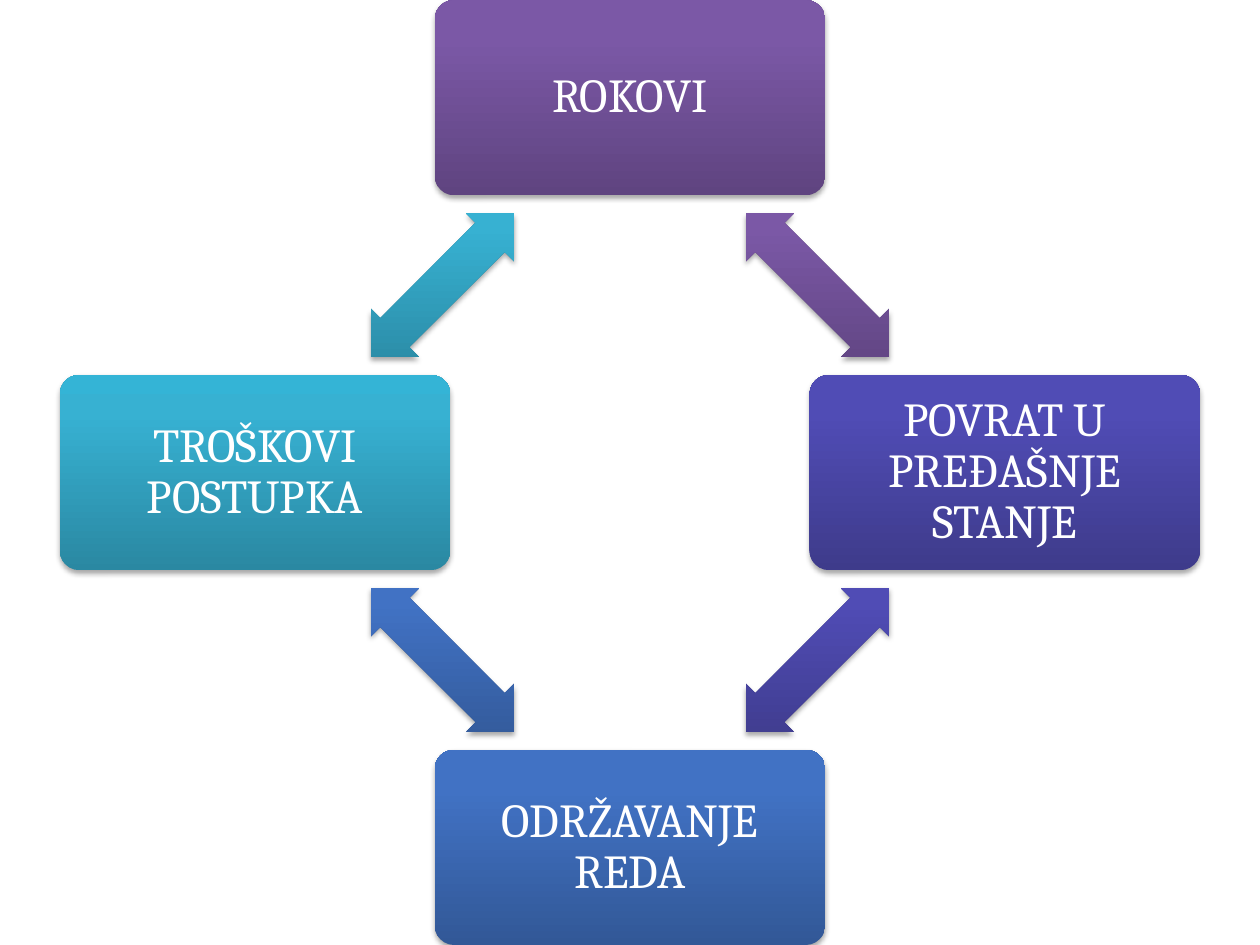
import pptx
import pptx.dml.color
import pptx.enum.shapes
import pptx.enum.text
import pptx.oxml
import pptx.oxml.ns
import pptx.util
from pptx.util import Inches

THEME = {
    "font": "Cambria",
    "size": 27,
    "text": "FFFFFF",
    "shadow": "000000",
    # Gradient stops from bottom to top, at 0, 80 and 100 percent
    "purple": ("5F4480", "7B58A6", "7C57A8"),
    "indigo": ("3E3B8B", "504CB5", "4F4BB8"),
    "blue": ("325897", "4172C4", "3F72C7"),
    "cyan": ("2A88A2", "37B1D2", "34B4D6"),
}
NAMESPACE = pptx.oxml.ns.nsdecls("a")
SHAPES = pptx.enum.shapes.MSO_SHAPE


def add_centred_shape(slide, kind, centre_x, centre_y, width, height):
    return slide.shapes.add_shape(
        kind, Inches(centre_x - width / 2), Inches(centre_y - height / 2),
        Inches(width), Inches(height))


def style_shape(shape, colours):
    """Vertical gradient, no outline and a soft shadow below."""
    shape.line.fill.background()
    shape.shadow.inherit = False
    properties = shape._element.spPr
    stops = "".join(
        f'<a:gs pos="{position * 1000}"><a:srgbClr val="{colour}"/></a:gs>'
        for position, colour in zip((0, 80, 100), colours))
    properties.find(pptx.oxml.ns.qn("a:ln")).addprevious(pptx.oxml.parse_xml(
        f'<a:gradFill {NAMESPACE} rotWithShape="0"><a:gsLst>{stops}</a:gsLst>'
        '<a:lin ang="16200000" scaled="0"/></a:gradFill>'))
    properties.find(pptx.oxml.ns.qn("a:effectLst")).append(pptx.oxml.parse_xml(
        f'<a:outerShdw {NAMESPACE} blurRad="{pptx.util.Pt(3.1)}" '
        f'dist="{pptx.util.Pt(1.8)}" dir="5400000" rotWithShape="0">'
        f'<a:srgbClr val="{THEME["shadow"]}"><a:alpha val="35000"/></a:srgbClr>'
        '</a:outerShdw>'))


presentation = pptx.Presentation()
presentation.slide_width = Inches(10)
presentation.slide_height = Inches(7.5)
slide = presentation.slides.add_slide(presentation.slide_layouts[6])

# Cycle of topics, clockwise from the top: text, colours, direction
topics = [
    ("ROKOVI", "purple", (0, -1)),
    ("POVRAT U PREĐAŠNJE STANJE", "indigo", (1, 0)),
    ("ODRŽAVANJE REDA", "blue", (0, 1)),
    ("TROŠKOVI POSTUPKA", "cyan", (-1, 0)),
]
centre_x, centre_y, radius = 5, 3.75, 2.975

for index, (text, colour_name, (step_x, step_y)) in enumerate(topics):
    # Topic box
    box = add_centred_shape(
        slide, SHAPES.ROUNDED_RECTANGLE,
        centre_x + radius * step_x, centre_y + radius * step_y, 3.1, 1.55)
    box.adjustments[0] = 0.1
    style_shape(box, THEME[colour_name])

    # Topic text
    frame = box.text_frame
    frame.text = text
    frame.word_wrap = True
    frame.vertical_anchor = pptx.enum.text.MSO_ANCHOR.MIDDLE
    frame.margin_left = frame.margin_right = Inches(0.11)
    frame.margin_top = frame.margin_bottom = Inches(0.11)
    paragraph = frame.paragraphs[0]
    paragraph.alignment = pptx.enum.text.PP_ALIGN.CENTER
    paragraph.line_spacing = 0.9
    font = paragraph.runs[0].font
    font.name = THEME["font"]
    font.size = pptx.util.Pt(THEME["size"])
    font.color.rgb = pptx.dml.color.RGBColor.from_string(THEME["text"])

    # Arrow halfway to the next topic
    next_x, next_y = topics[(index + 1) % len(topics)][2]
    arrow = add_centred_shape(
        slide, SHAPES.LEFT_RIGHT_ARROW,
        centre_x + radius * (step_x + next_x) / 2,
        centre_y + radius * (step_y + next_y) / 2, 1.61, 0.54)
    arrow.adjustments[0] = 0.6
    arrow.adjustments[1] = 0.5
    arrow.rotation = 45 + 90 * index
    style_shape(arrow, THEME[colour_name])

presentation.save("out.pptx")
